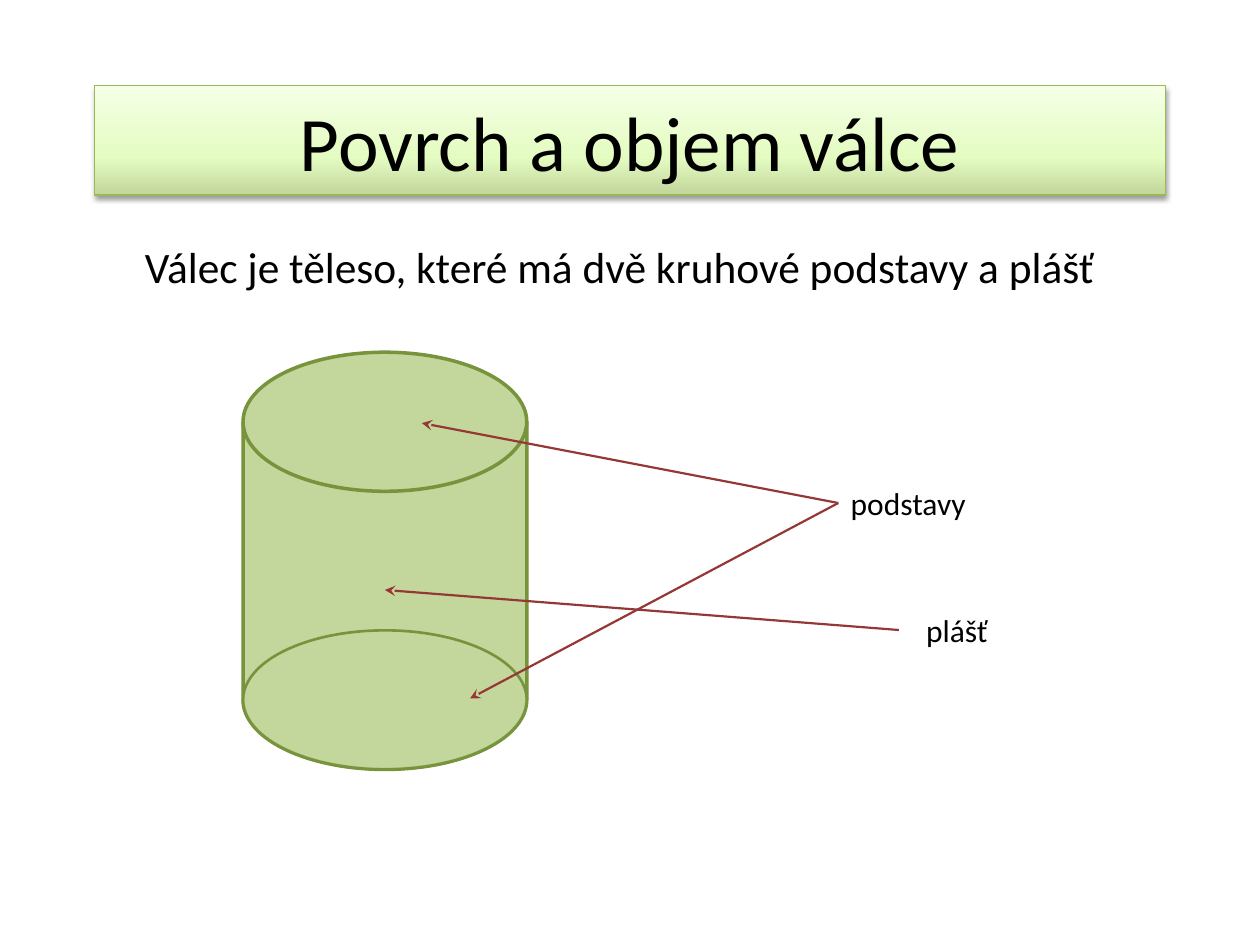
from collections import namedtuple
from copy import deepcopy

from lxml import etree
from pptx import Presentation
from pptx.dml.color import RGBColor
from pptx.enum.shapes import MSO_CONNECTOR, MSO_SHAPE
from pptx.enum.text import MSO_ANCHOR, MSO_AUTO_SIZE, PP_ALIGN
from pptx.oxml import parse_xml
from pptx.oxml.ns import nsdecls, qn
from pptx.util import Cm, Pt

STRAIGHT = MSO_CONNECTOR.STRAIGHT
DRUM, ELLIPSE = MSO_SHAPE.FLOWCHART_DIRECT_ACCESS_STORAGE, MSO_SHAPE.OVAL
MIDDLE, TOP = MSO_ANCHOR.MIDDLE, MSO_ANCHOR.TOP
CENTER, LEFT = PP_ALIGN.CENTER, PP_ALIGN.LEFT
FIXED, GROW = MSO_AUTO_SIZE.NONE, MSO_AUTO_SIZE.SHAPE_TO_FIT_TEXT

FONT = "Calibri"
COLORS = {
    "text": "000000",
    "solid": "C3D69B",
    "edge": "77933C",
    "arrow": "953735",
    "band_edge": "98B955",
    "band_middle": "E4FCC2",
    "band_light": "F5FFE7",
}
BAND_STOPS = [(0, "solid"), (0.35, "band_middle"), (1, "band_light")]

Box = namedtuple("Box", "left top width height")


def color(name):
    """Return the named palette colour."""
    return RGBColor.from_string(COLORS[name])


def place(shape, box):
    """Move and size a shape to a box in centimetres."""
    shape.left, shape.top, shape.width, shape.height = map(Cm, box)


def write(shape, text, size, align, anchor=TOP):
    """Set the text of a shape and format its single run."""
    frame = shape.text_frame
    frame.text = text
    frame.vertical_anchor = anchor
    para = frame.paragraphs[0]
    para.alignment = align
    font = para.runs[0].font
    font.name, font.size = FONT, Pt(size)
    font.color.rgb = color("text")


def set_line(shape, name, width):
    """Give a shape or connector a solid outline."""
    shape.line.color.rgb = color(name)
    shape.line.width = Pt(width)


def fill_title(title, box, text):
    """Turn the title placeholder into a shaded band with a shadow."""
    place(title, box)
    write(title, text, 44, CENTER, MIDDLE)
    title.text_frame.auto_size = FIXED
    title.fill.gradient()
    title.fill.gradient_angle = 90
    properties = title._element.spPr
    stop_list = properties.find(".//" + qn("a:gsLst"))
    stop_list.append(deepcopy(stop_list[-1]))
    for stop, (position, name) in zip(title.fill.gradient_stops, BAND_STOPS):
        stop.position = position
        stop.color.rgb = color(name)
    set_line(title, "band_edge", 0.75)
    properties.append(parse_xml(
        f'<a:effectLst {nsdecls("a")}>'
        f'<a:outerShdw blurRad="{Pt(3.1)}" dist="{Pt(1.6)}" dir="5400000" rotWithShape="0">'
        '<a:srgbClr val="000000"><a:alpha val="38000"/></a:srgbClr>'
        '</a:outerShdw></a:effectLst>'))


def fill_subtitle(subtitle, box, text):
    """Place the definition under the title."""
    place(subtitle, box)
    write(subtitle, text, 24.8, CENTER)
    subtitle.text_frame.auto_size = FIXED


def add_solid(group, kind, box, width):
    """Add one filled part of the cylinder."""
    shape = group.shapes.add_shape(kind, *map(Cm, box))
    shape.shadow.inherit = False
    shape.fill.solid()
    shape.fill.fore_color.rgb = color("solid")
    set_line(shape, "edge", width)
    return shape


def add_cylinder(slide, box):
    """Draw an upright cylinder with its lower base visible."""
    group = slide.shapes.add_group_shape()
    shift = (box.height - box.width) / 2
    body = add_solid(group, DRUM, Box(box.left - shift, box.top + shift, box.height, box.width), 2)
    body.rotation = 270
    base_height = box.height / 3
    base_top = box.top + box.height - base_height
    base = add_solid(group, ELLIPSE, Box(box.left, base_top, box.width, base_height), 1.5)
    base_color = base._element.spPr.find(qn("a:solidFill"))[0]
    etree.SubElement(base_color, qn("a:alpha"), val="73000")


def add_arrow(group, start, tip):
    """Draw a thin arrow from start to tip, both in centimetres."""
    arrow = group.shapes.add_connector(STRAIGHT, *map(Cm, start + tip))
    set_line(arrow, "arrow", 1.25)
    etree.SubElement(arrow.line._get_or_add_ln(), qn("a:tailEnd"), type="stealth")
    etree.SubElement(arrow._element.spPr, qn("a:effectLst"))


def add_callout(slide, box, text, gap, target, tips):
    """Add a label with arrows to tips given as fractions of the target box."""
    group = slide.shapes.add_group_shape()
    label = group.shapes.add_textbox(*map(Cm, box))
    write(label, text, 18, LEFT)
    label.text_frame.word_wrap = False
    label.text_frame.auto_size = GROW
    start = (box.left - gap, box.top + box.height / 2)
    for across, down in tips:
        tip = (target.left + across * target.width, target.top + down * target.height)
        add_arrow(group, start, tip)


def main():
    """Build the slide about the cylinder."""
    deck = Presentation()
    deck.slide_width, deck.slide_height = Cm(25.4), Cm(19.05)
    slide = deck.slides.add_slide(deck.slide_layouts[0])
    title, subtitle = slide.placeholders
    fill_title(title, Box(1.9, 1.73, 21.6, 2.2), "Povrch a objem válce")
    fill_subtitle(subtitle, Box(1.9, 4.72, 21.2, 1.8),
                  "Válec je těleso, které má dvě kruhové podstavy a plášť")
    cylinder = Box(4.9, 7.1, 5.72, 8.41)
    add_cylinder(slide, cylinder)
    add_callout(slide, Box(16.9, 9.63, 2.84, 1.02), "podstavy", 0, cylinder,
                [(0.63, 0.17), (0.8, 0.83)])
    add_callout(slide, Box(18.42, 12.19, 1.78, 1.02), "plášť", 0.3, cylinder, [(0.5, 0.57)])
    deck.save("out.pptx")


if __name__ == "__main__":
    main()
